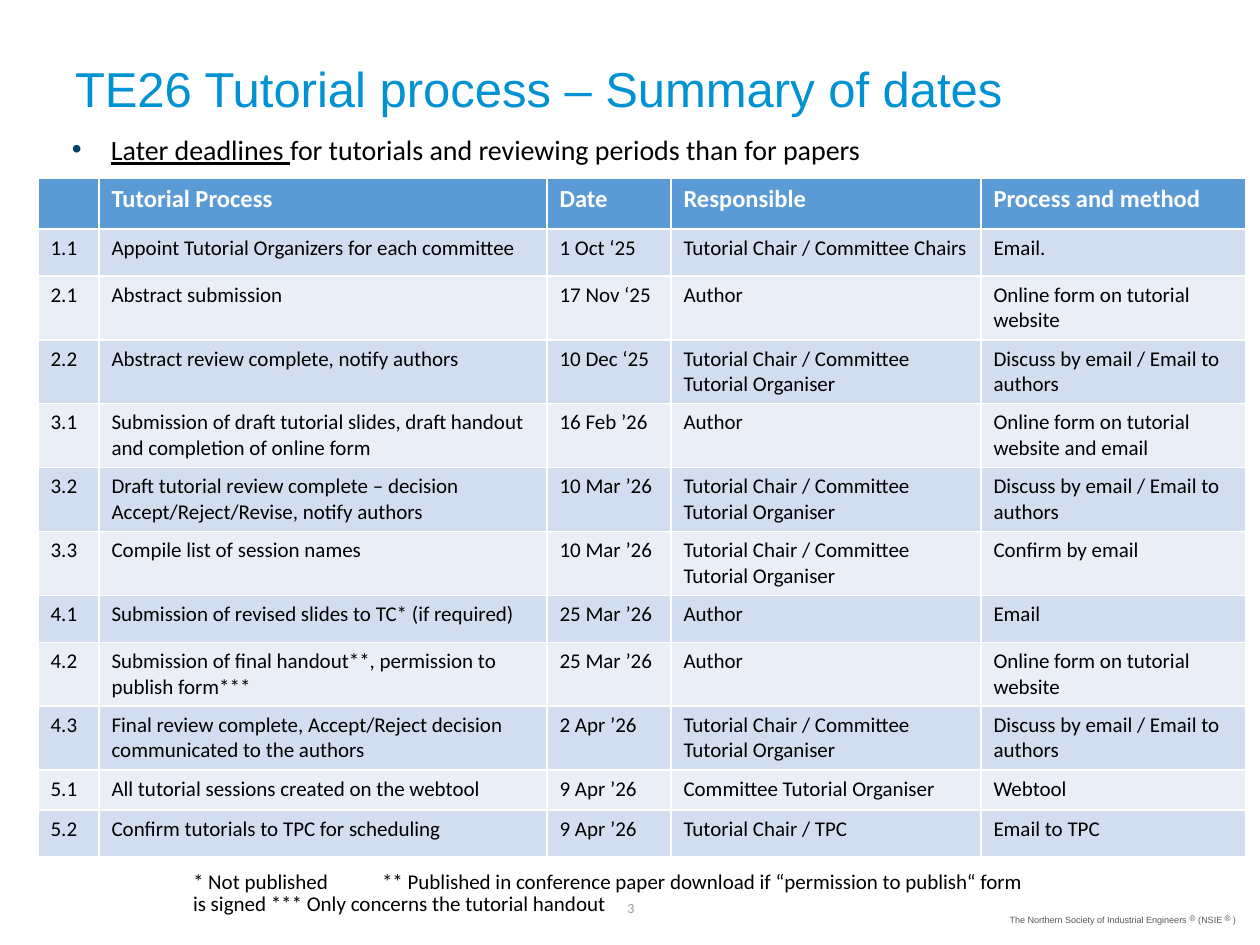
import lxml.etree
import pptx
import pptx.dml.color
import pptx.enum.text
import pptx.oxml.ns
import pptx.util

SCALE = 914400 / 126
COLORS = {
    "title": "0092D2", "dot": "01426A", "text": "000000", "white": "FFFFFF",
    "head": "5B9BD5", "dark": "D2DEEF", "light": "EAEFF7",
    "grey": "595959", "pale": "999999",
}
ALIGN = pptx.enum.text.PP_ALIGN
ANCHOR = pptx.enum.text.MSO_ANCHOR


def px(n):
    return pptx.util.Emu(round(n * SCALE))


def color(name):
    return pptx.dml.color.RGBColor.from_string(COLORS[name])


def apply(item, form):
    for key, value in form.items():
        setattr(item, key, value)


def add_xml(parent, tag, **attrs):
    return lxml.etree.SubElement(parent, pptx.oxml.ns.qn(tag), attrs)


class Deck:
    """Holds the style and the current slide."""

    font = "Calibri"
    para = {"line_spacing": 0.9, "space_before": pptx.util.Pt(0),
            "space_after": pptx.util.Pt(4.5)}

    def __init__(self, slide):
        self.slide = slide

    def run(self, para, text, size, ink="text", base=0, **form):
        run = para.add_run()
        run.text = text
        apply(run.font, {"name": self.font, "size": pptx.util.Pt(size), **form})
        run.font.color.rgb = color(ink)
        if base:
            run.font._element.set("baseline", str(base * 1000))

    def frame(self, shape, box, inset=(0, 0), anchor=ANCHOR.TOP):
        apply(shape, dict(zip(("left", "top", "width", "height"), map(px, box))))
        side, edge = map(px, inset)
        frame = shape.text_frame
        apply(frame, {
            "word_wrap": True, "auto_size": pptx.enum.text.MSO_AUTO_SIZE.NONE,
            "vertical_anchor": anchor, "margin_left": side, "margin_right": side,
            "margin_top": edge, "margin_bottom": edge})
        return frame.paragraphs[0]

    def title(self, text, box):
        para = self.frame(self.slide.shapes.title, box, anchor=ANCHOR.MIDDLE)
        apply(para, {"alignment": ALIGN.LEFT, "line_spacing": 0.9})
        self.run(para, text, 28, "title", name="Arial")

    def body(self, index, box, parts, size, indent=0, tab=0):
        para = self.frame(self.slide.placeholders[index], box)
        props = para._p.get_or_add_pPr()
        props.set("marL", str(px(indent)))
        props.set("indent", str(-px(indent)))
        if indent:
            add_xml(add_xml(props, "a:buClr"), "a:srgbClr", val=COLORS["dot"])
            add_xml(props, "a:buFont", typeface="Arial")
            add_xml(props, "a:buChar", char="•")
        else:
            add_xml(props, "a:buNone")
        if tab:
            add_xml(add_xml(props, "a:tabLst"), "a:tab", pos=str(px(tab)), algn="l")
        apply(para, self.para)
        for text, form in parts:
            self.run(para, text, size, **form)

    def label(self, box, align, parts):
        shape = self.slide.shapes.add_textbox(0, 0, 0, 0)
        para = self.frame(shape, box, inset=(10, 5))
        para.alignment = align
        for text, size, form in parts:
            self.run(para, text, size, **form)

    def table(self, left, top, widths, heights, rows):
        shape = self.slide.shapes.add_table(
            len(rows), len(widths), px(left), px(top),
            px(sum(widths)), px(sum(heights)))
        table = shape.table
        for col, width in zip(table.columns, widths):
            col.width = px(width)
        for i, (row, height, texts) in enumerate(zip(table.rows, heights, rows)):
            row.height = px(height)
            fill = "head" if i == 0 else ("light", "dark")[i % 2]
            size, ink = (14, "white") if i == 0 else (12, "text")
            for cell, text in zip(row.cells, texts):
                cell.fill.solid()
                cell.fill.fore_color.rgb = color(fill)
                if text:
                    self.run(cell.text_frame.paragraphs[0], text, size, ink,
                             bold=i == 0)


CHAIR = "Tutorial Chair / Committee Tutorial Organiser"
FORM = "Online form on tutorial website"
TALK = "Discuss by email / Email to authors"
ROWS = [
    ("", "Tutorial Process", "Date", "Responsible", "Process and method"),
    ("1.1", "Appoint Tutorial Organizers for each committee", "1 Oct ‘25",
     "Tutorial Chair / Committee Chairs", "Email."),
    ("2.1", "Abstract submission", "17 Nov ‘25", "Author", FORM),
    ("2.2", "Abstract review complete, notify authors", "10 Dec ‘25", CHAIR, TALK),
    ("3.1", "Submission of draft tutorial slides, draft handout and completion "
     "of online form", "16 Feb ’26", "Author", FORM + " and email"),
    ("3.2", "Draft tutorial review complete – decision Accept/Reject/Revise, "
     "notify authors", "10 Mar ’26", CHAIR, TALK),
    ("3.3", "Compile list of session names", "10 Mar ’26", CHAIR,
     "Confirm by email"),
    ("4.1", "Submission of revised slides to TC* (if required)", "25 Mar ’26",
     "Author", "Email"),
    ("4.2", "Submission of final handout**, permission to publish form***",
     "25 Mar ’26", "Author", FORM),
    ("4.3", "Final review complete, Accept/Reject decision communicated to the "
     "authors", "2 Apr ’26", CHAIR, TALK),
    ("5.1", "All tutorial sessions created on the webtool", "9 Apr ’26",
     "Committee Tutorial Organiser", "Webtool"),
    ("5.2", "Confirm tutorials to TPC for scheduling", "9 Apr ’26",
     "Tutorial Chair / TPC", "Email to TPC"),
]
# Row heights: one line, two lines, and the tight webtool row
ONE, TWO, TIGHT = 47, 63, 40
HEIGHTS = [ONE, ONE] + [TWO] * 5 + [ONE, TWO, TWO, TIGHT, ONE]


def main():
    show = pptx.Presentation()
    apply(show, {"slide_width": px(1260), "slide_height": px(945)})
    deck = Deck(show.slides.add_slide(show.slide_layouts[3]))

    # Title and lead bullet
    deck.title("TE26 Tutorial process – Summary of dates", (75, 0, 1114, 183))
    deck.body(1, (72, 136, 1142, 49), [
        ("Later deadlines ", {"underline": True}),
        ("for tutorials and reviewing periods than for papers", {}),
    ], 16, indent=39)

    # Table of dates
    deck.table(38, 178, (61, 448, 124, 310, 265), HEIGHTS, ROWS)

    # Notes on the stars
    deck.body(2, (193, 871, 837, 28), [
        ("* Not published\t** Published in conference paper download if "
         "“permission to publish“ form is signed *** Only concerns the "
         "tutorial handout", {})], 12, tab=155)

    # Page number and footer
    deck.label((489, 895, 284, 50), ALIGN.CENTER, [("3", 8, {"ink": "pale"})])
    grey = {"ink": "grey", "name": "Arial"}
    low, high = {**grey, "base": 30}, {**grey, "base": 46}
    deck.label((931, 907, 315, 23), ALIGN.RIGHT, [
        ("The Northern Society of Industrial Engineers ", 9, low),
        ("®", 8, high), (" (NSIE", 9, low), (" ® ", 8, high), (")", 9, low)])

    show.save("out.pptx")


if __name__ == "__main__":
    main()
